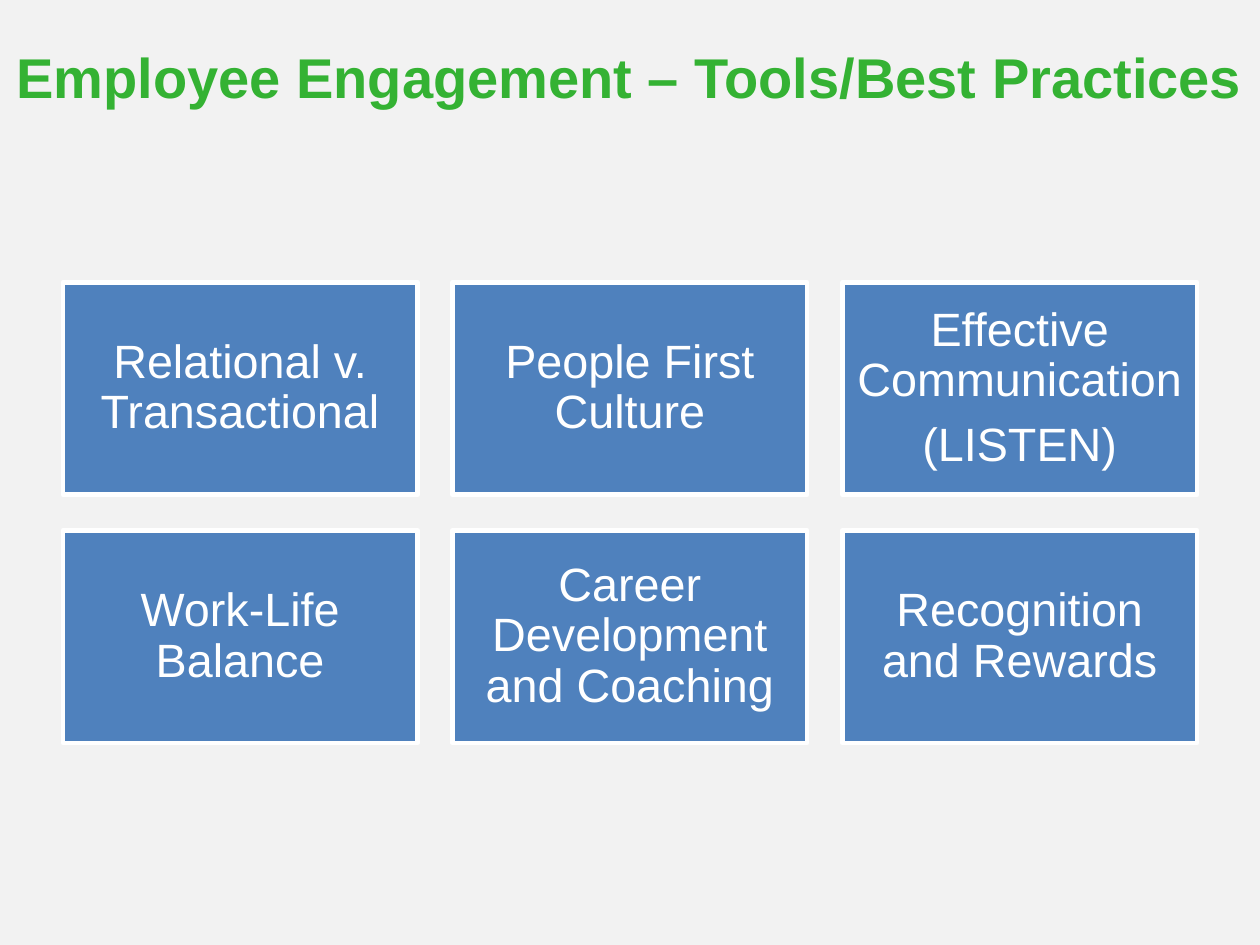
from dataclasses import dataclass

from pptx import Presentation
from pptx.dml.color import RGBColor
from pptx.enum.shapes import MSO_SHAPE
from pptx.enum.text import MSO_ANCHOR, PP_ALIGN
from pptx.util import Inches, Pt

# Content
TITLE = "Employee Engagement – Tools/Best Practices"
PRACTICES = [
    [["Relational v. Transactional"], ["People First Culture"],
     ["Effective Communication", "(LISTEN)"]],
    [["Work-Life Balance"], ["Career Development and Coaching"],
     ["Recognition and Rewards"]],
]


@dataclass(frozen=True)
class Theme:
    background: str = "F2F2F2"
    title_color: str = "34B233"
    tile: str = "4F81BD"
    white: str = "FFFFFF"
    font: str = "Arial"
    title_size: int = 24
    tile_size: int = 20


THEME = Theme()

# Layout in inches: a 4:3 page, tiles on a grid with gaps of a tenth of a tile
SLIDE_WIDTH = 7.5
SLIDE_HEIGHT = SLIDE_WIDTH * 3 / 4
TITLE_TOP, TITLE_HEIGHT = 0.11, 0.68
GRID_LEFT = 0.05 * SLIDE_WIDTH
GRID_TOP = 1.68
GRID_WIDTH = SLIDE_WIDTH - 2 * GRID_LEFT
TILE_WIDTH = GRID_WIDTH / 3.2
TILE_HEIGHT = 0.6 * TILE_WIDTH
GAP = 0.1 * TILE_WIDTH
INSET = 0.08


def color(value):
    return RGBColor.from_string(value)


def apply_format(target, values):
    for name, value in values.items():
        setattr(target, name, value)


def write_text(shape, lines, font, paragraph, left=INSET, right=INSET):
    frame = shape.text_frame
    apply_format(frame, {
        "word_wrap": True, "vertical_anchor": MSO_ANCHOR.MIDDLE,
        "margin_left": Inches(left), "margin_right": Inches(right),
        "margin_top": Inches(INSET), "margin_bottom": Inches(INSET),
    })
    for index, line in enumerate(lines):
        para = frame.add_paragraph() if index else frame.paragraphs[0]
        apply_format(para, paragraph)
        span = para.add_run()
        span.text = line
        apply_format(span.font, {"name": THEME.font, **font["style"]})
        span.font.color.rgb = color(font["color"])


def add_title(page):
    box = page.shapes.add_textbox(
        0, Inches(TITLE_TOP), Inches(SLIDE_WIDTH), Inches(TITLE_HEIGHT))
    font = {"style": {"size": Pt(THEME.title_size), "bold": True},
            "color": THEME.title_color}
    write_text(box, [TITLE], font, {"alignment": PP_ALIGN.LEFT}, left=0.1, right=0)


def add_tile(page, row, column, lines):
    left = GRID_LEFT + column * (TILE_WIDTH + GAP)
    top = GRID_TOP + row * (TILE_HEIGHT + GAP)
    tile = page.shapes.add_shape(
        MSO_SHAPE.RECTANGLE, Inches(left), Inches(top),
        Inches(TILE_WIDTH), Inches(TILE_HEIGHT))
    tile.shadow.inherit = False
    tile.fill.solid()
    tile.fill.fore_color.rgb = color(THEME.tile)
    tile.line.color.rgb = color(THEME.white)
    tile.line.width = Pt(2)
    font = {"style": {"size": Pt(THEME.tile_size)}, "color": THEME.white}
    write_text(tile, lines, font, {
        "alignment": PP_ALIGN.CENTER, "line_spacing": 0.9, "space_after": Pt(6)})


def main():
    deck = Presentation()
    deck.slide_width = Inches(SLIDE_WIDTH)
    deck.slide_height = Inches(SLIDE_HEIGHT)
    page = deck.slides.add_slide(deck.slide_layouts[6])
    page.background.fill.solid()
    page.background.fill.fore_color.rgb = color(THEME.background)

    add_title(page)
    for row, practices in enumerate(PRACTICES):
        for column, lines in enumerate(practices):
            add_tile(page, row, column, lines)
    deck.save("out.pptx")


if __name__ == "__main__":
    main()
